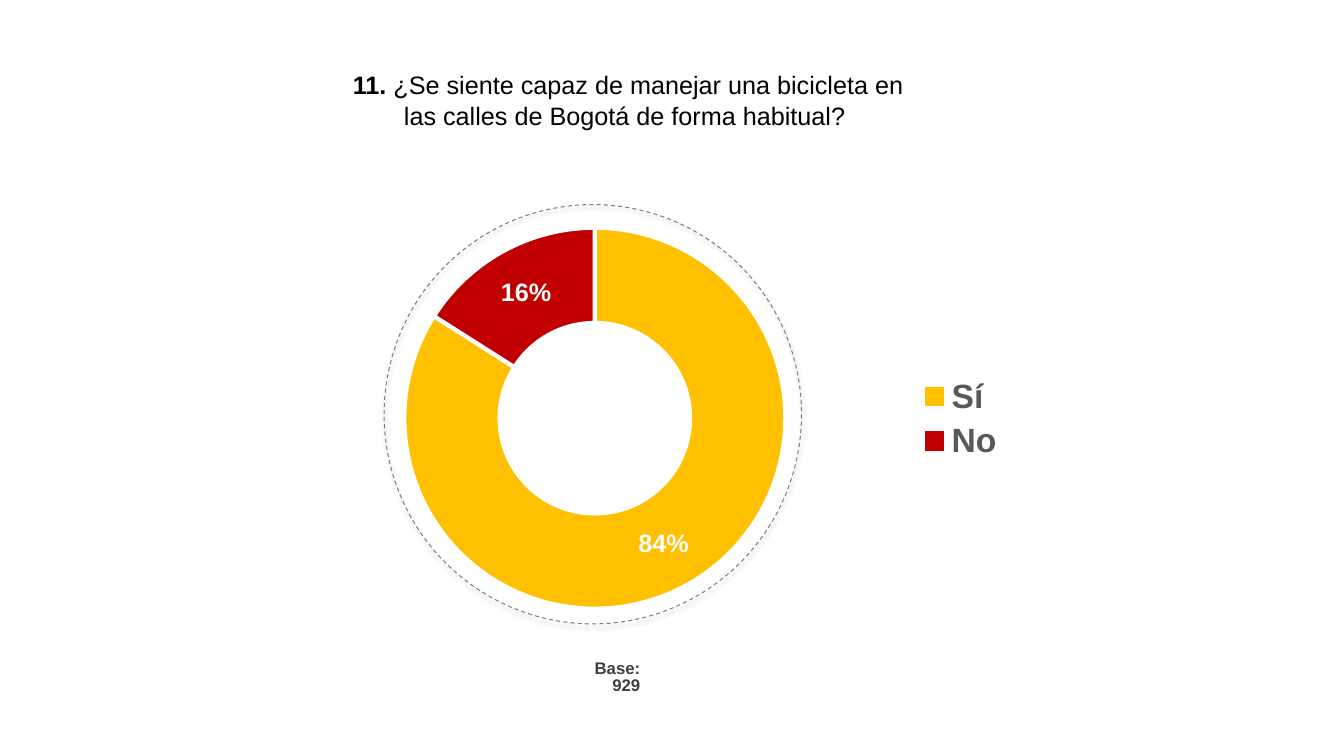
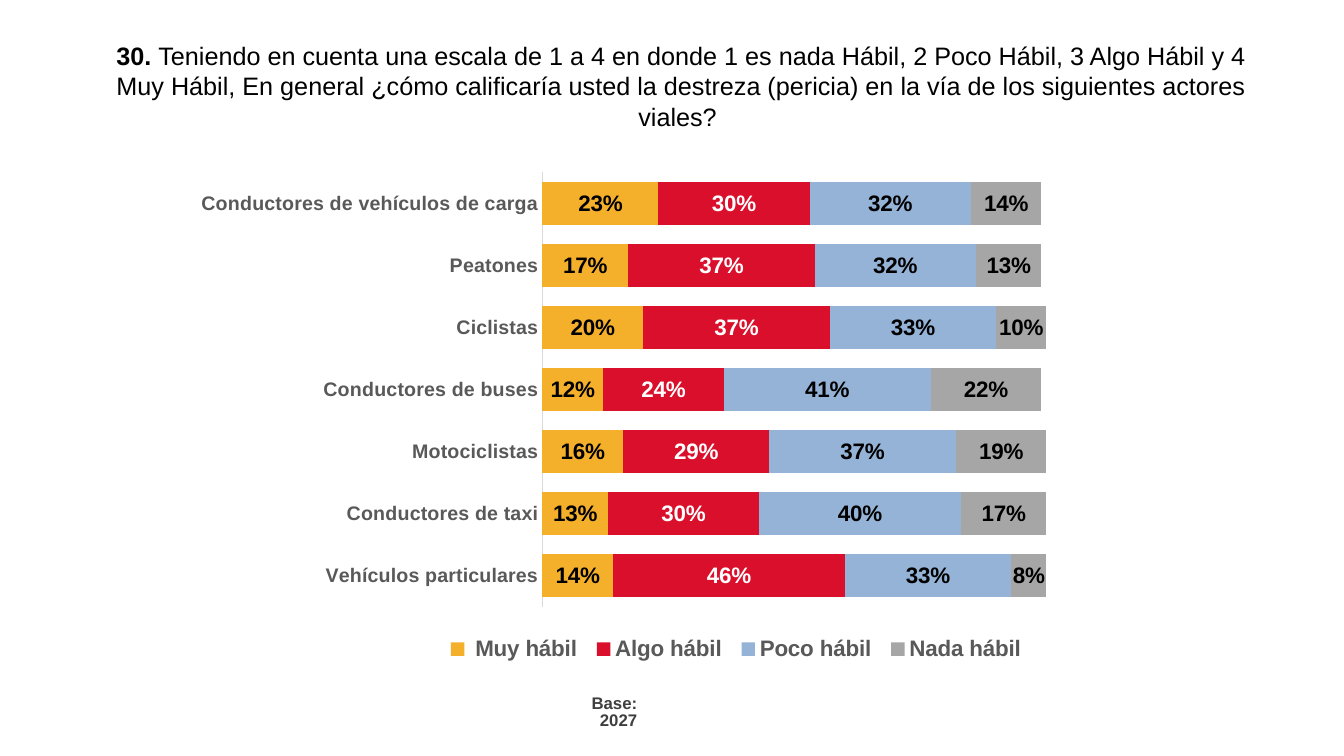
"""Build two survey slides: a doughnut answer and a stacked skill rating."""
from dataclasses import dataclass

from lxml import etree
from pptx import Presentation
from pptx.chart.data import CategoryChartData
from pptx.dml.color import RGBColor
from pptx.enum.chart import XL_CHART_TYPE as ChartType
from pptx.enum.chart import XL_LABEL_POSITION as LabelPos
from pptx.enum.chart import XL_LEGEND_POSITION as LegendPos
from pptx.enum.chart import XL_TICK_MARK as Tick
from pptx.enum.dml import MSO_LINE as Dash
from pptx.enum.shapes import MSO_SHAPE as Preset
from pptx.enum.text import MSO_ANCHOR as Anchor
from pptx.enum.text import MSO_AUTO_SIZE as AutoSize
from pptx.enum.text import PP_ALIGN as Align
from pptx.oxml import parse_xml
from pptx.oxml.ns import nsdecls, qn
from pptx.util import Inches, Pt


@dataclass(frozen=True)
class Theme:
    """Colours and type sizes shared by the slides."""
    font: str = "Arial"
    black: str = "000000"
    white: str = "FFFFFF"
    base_grey: str = "3F3F3F"
    label_grey: str = "595959"
    ring_grey: str = "7F7F7F"
    axis_grey: str = "D9D9D9"
    title_size: int = 18
    base_size: int = 12
    chart_size: int = 10
    axis_size: int = 14
    rating_size: int = 16
    answer_size: int = 18
    answer_legend_size: int = 24


THEME = Theme()

ANSWER = {
    "number": "11.",
    "question": " ¿Se siente capaz de manejar una bicicleta en las calles de Bogotá de forma habitual? ",
    "title_box": (3.38, 0.64, 5.7, 0.7),
    "base": "Base: 929",
    "base_box": (5.58, 6.51, 0.87, 0.39),
    "chart_box": (2.77, 2.11, 7.25, 4.07),
    "plot_box": (4.01, 2.24, 3.78, 3.82),
    "legend_box": (9.05, 3.68, 0.95, 0.95),
    "legend_size": THEME.answer_legend_size,
    "legend_pos": LegendPos.RIGHT,
    "kind": ChartType.DOUGHNUT,
    "categories": ["Sí", "No"],
    "series": [("Series 1", [0.84, 0.16])],
}
ANSWER_COLOURS = ["FFC000", "C00000"]
RING_BOX = (3.81, 2.03, 4.14, 4.16)

RATING = {
    "number": "30. ",
    "question": "Teniendo en cuenta una escala de 1 a 4 en donde 1 es nada Hábil, 2 Poco Hábil, "
                "3 Algo Hábil y 4 Muy Hábil, En general ¿cómo calificaría usted la destreza "
                "(pericia) en la vía de los siguientes actores viales? ",
    "title_box": (1.03, 0.35, 11.45, 1.01),
    "base": "Base: 2027",
    "base_box": (5.46, 6.86, 0.96, 0.39),
    "chart_box": (1.85, 1.57, 8.53, 5.42),
    "plot_box": (5.39, 1.71, 5, 4.31),
    "legend_box": (4.35, 6.24, 5.9, 0.4),
    "legend_size": THEME.rating_size,
    "legend_pos": LegendPos.BOTTOM,
    "kind": ChartType.BAR_STACKED,
    "categories": ["Vehículos particulares", "Conductores de taxi", "Motociclistas",
                   "Conductores de buses", "Ciclistas", "Peatones",
                   "Conductores de vehículos de carga"],
    "series": [
        (" Muy hábil", [0.14, 0.13, 0.16, 0.12, 0.2, 0.17, 0.23]),
        ("Algo hábil", [0.46, 0.3, 0.29, 0.24, 0.37, 0.37, 0.3]),
        ("Poco hábil", [0.33, 0.4, 0.37, 0.41, 0.33, 0.32, 0.32]),
        ("Nada hábil", [0.08, 0.17, 0.19, 0.22, 0.1, 0.13, 0.14]),
    ],
}
RATING_COLOURS = [("F5B02B", THEME.black), ("DA0F2B", THEME.white),
                  ("95B3D7", THEME.black), ("A6A6A6", THEME.black)]


def assign(target, **values):
    for name, value in values.items():
        setattr(target, name, value)


def style(font, size, colour, bold=False):
    assign(font, name=THEME.font, size=Pt(size), bold=bold)
    font.color.rgb = RGBColor.from_string(colour)


def paint(fill, colour):
    fill.solid()
    fill.fore_color.rgb = RGBColor.from_string(colour)


def place(part, box):
    assign(part, **dict(zip(("left", "top", "width", "height"), map(Inches, box))))


def write(frame, texts, align, size, colour, spacing=1.0):
    assign(frame, word_wrap=True, auto_size=AutoSize.NONE, vertical_anchor=Anchor.TOP,
           margin_left=Inches(0.1), margin_right=Inches(0.1),
           margin_top=Inches(0.05), margin_bottom=Inches(0.05))
    paragraph = frame.paragraphs[0]
    assign(paragraph, alignment=align, line_spacing=spacing, space_before=Pt(0))
    for text, bold in texts:
        run = paragraph.add_run()
        run.text = text
        style(run.font, size, colour, bold)


def manual_layout(box, chart_box, inner=False):
    left, top, width, height = chart_box
    fractions = {"x": (box[0] - left) / width, "y": (box[1] - top) / height,
                 "w": box[2] / width, "h": box[3] / height}
    layout = parse_xml(f"<c:layout {nsdecls('c')}><c:manualLayout/></c:layout>")
    settings = {"layoutTarget": "inner"} if inner else {}
    settings |= {"xMode": "edge", "yMode": "edge"}
    settings |= {key: f"{value:.4f}" for key, value in fractions.items()}
    for tag, value in settings.items():
        etree.SubElement(layout[0], qn(f"c:{tag}")).set("val", value)
    return layout


def arrange(chart, survey):
    plot_area = chart.element.find(".//" + qn("c:plotArea"))
    legend = chart.element.find(".//" + qn("c:legend"))
    for owner in (plot_area, legend):
        for old in owner.findall(qn("c:layout")):
            owner.remove(old)
    plot_area.insert(0, manual_layout(survey["plot_box"], survey["chart_box"], inner=True))
    legend.find(qn("c:legendPos")).addnext(
        manual_layout(survey["legend_box"], survey["chart_box"]))


def label_values(series, size, colour):
    labels = series.data_labels
    assign(labels, show_value=True, show_percentage=False,
           number_format="0%", number_format_is_linked=False)
    style(labels.font, size, colour, bold=True)
    return labels


def add_survey(deck, survey):
    slide = deck.slides.add_slide(deck.slide_layouts[5])
    place(slide.shapes.title, survey["title_box"])
    write(slide.shapes.title.text_frame,
          [(survey["number"], True), (survey["question"], False)],
          Align.CENTER, THEME.title_size, THEME.black)
    base = slide.shapes.add_textbox(*map(Inches, survey["base_box"]))
    write(base.text_frame, [(survey["base"], True)], Align.RIGHT,
          THEME.base_size, THEME.base_grey, spacing=0.83)

    data = CategoryChartData(number_format="0%")
    data.categories = survey["categories"]
    for name, values in survey["series"]:
        data.add_series(name, values)
    chart = slide.shapes.add_chart(survey["kind"], *map(Inches, survey["chart_box"]), data).chart
    assign(chart, has_title=False, has_legend=True)
    style(chart.font, THEME.chart_size, THEME.black)
    assign(chart.legend, position=survey["legend_pos"], include_in_layout=False)
    style(chart.legend.font, survey["legend_size"], THEME.label_grey, bold=True)
    arrange(chart, survey)
    return slide, chart


def build_answer(deck):
    slide, chart = add_survey(deck, ANSWER)
    answers = chart.plots[0].series[0]
    for index, colour in enumerate(ANSWER_COLOURS):
        slice_format = answers.points[index].format
        paint(slice_format.fill, colour)
        paint(slice_format.line.fill, THEME.white)
        slice_format.line.width = Pt(3)
    label_values(answers, THEME.answer_size, THEME.white)

    ring = slide.shapes.add_shape(Preset.OVAL, *map(Inches, RING_BOX))
    ring.fill.background()
    paint(ring.line.fill, THEME.ring_grey)
    assign(ring.line, width=Pt(0.75), dash_style=Dash.DASH)
    ring.shadow.inherit = False
    ring.element.spPr.find(qn("a:effectLst")).append(parse_xml(
        f'<a:outerShdw {nsdecls("a")} blurRad="{Pt(3.1)}" dist="{Pt(1.8)}" dir="5400000" '
        f'rotWithShape="0"><a:srgbClr val="{THEME.black}"><a:alpha val="35000"/>'
        '</a:srgbClr></a:outerShdw>'))


def build_rating(deck):
    _, chart = add_survey(deck, RATING)
    bars = chart.plots[0]
    assign(bars, gap_width=45, overlap=100, vary_by_categories=False)
    for level, (colour, label_colour) in zip(bars.series, RATING_COLOURS):
        paint(level.format.fill, colour)
        label_values(level, THEME.rating_size, label_colour).position = LabelPos.CENTER
    assign(chart.value_axis, visible=False, minimum_scale=0, maximum_scale=1,
           has_major_gridlines=False)
    actors = chart.category_axis
    assign(actors, major_tick_mark=Tick.NONE, minor_tick_mark=Tick.NONE,
           has_major_gridlines=False)
    style(actors.tick_labels.font, THEME.axis_size, THEME.label_grey, bold=True)
    paint(actors.format.line.fill, THEME.axis_grey)
    actors.format.line.width = Pt(0.75)


def main():
    deck = Presentation()
    assign(deck, slide_width=Inches(13.33), slide_height=Inches(7.5))
    build_answer(deck)
    build_rating(deck)
    deck.save("out.pptx")


if __name__ == "__main__":
    main()
